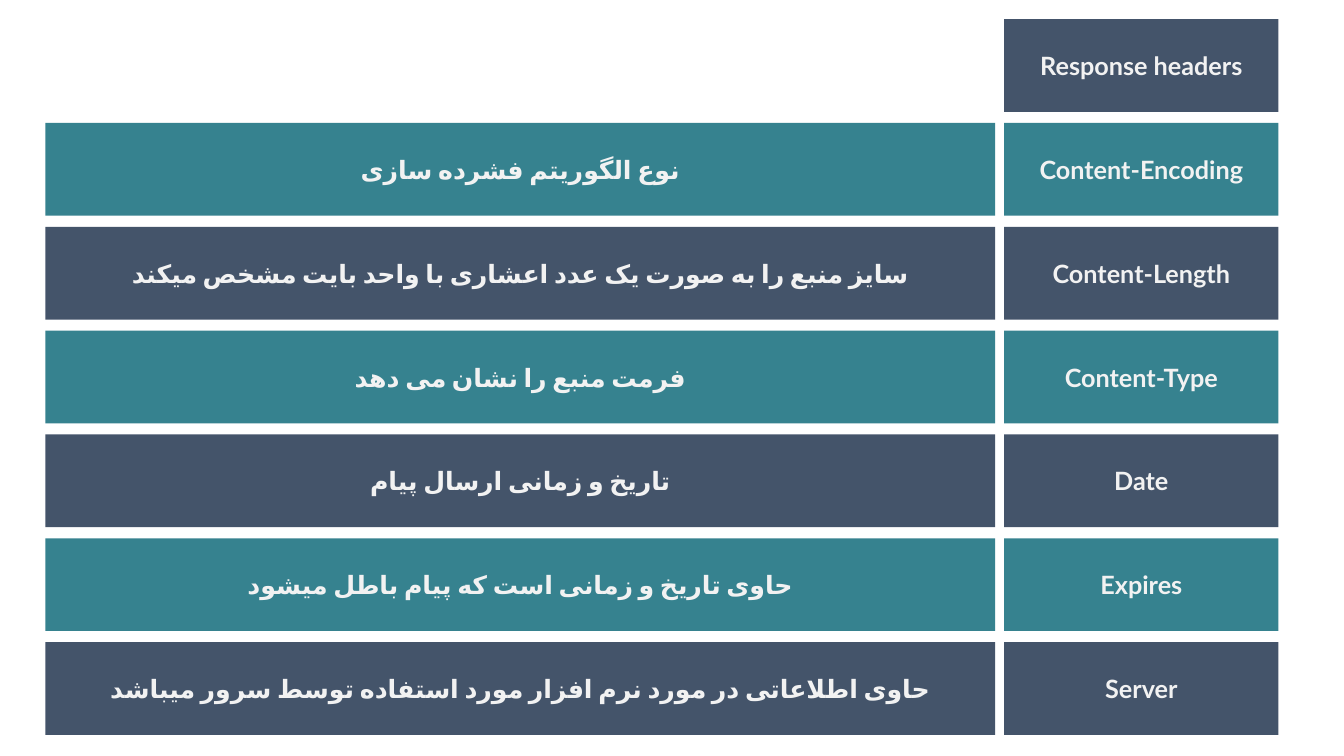
from lxml.etree import SubElement as Sub
from pptx import Presentation
from pptx.dml.color import RGBColor
from pptx.enum.shapes import MSO_SHAPE as Shape
from pptx.enum.text import MSO_ANCHOR as Anchor, MSO_AUTO_SIZE as Fit, PP_ALIGN as Align
from pptx.oxml.ns import qn
from pptx.util import Inches, Pt

TEAL = RGBColor(0x36, 0x82, 0x8F)
SLATE = RGBColor(0x44, 0x54, 0x6A)
PALE = RGBColor(0xF2, 0xF2, 0xF2)

TOP, PITCH, HIGH = 0.19, 1.03, 0.92
NOTE_COL = (0.45, 9.42)
NAME_COL = (9.96, 2.72)

ROWS = [
    ("Content-Encoding", "نوع الگوریتم فشرده سازی"),
    ("Content-Length", "سایز منبع را به صورت یک عدد اعشاری با واحد بایت مشخص میکند"),
    ("Content-Type", "فرمت منبع را نشان می دهد"),
    ("Date", "تاریخ و زمانی ارسال پیام"),
    ("Expires", "حاوی تاریخ و زمانی است که پیام باطل میشود"),
    ("Server", "حاوی اطلاعاتی در مورد نرم افزار مورد استفاده توسط سرور میباشد"),
]


def cell_box(col, row):
    """Return the box of a grid cell."""
    left, width = col
    return [Inches(n) for n in (left, TOP + row * PITCH, width, HIGH)]


def set_rtl(para, font):
    """Make a paragraph run from right to left in the given script font."""
    para._p.get_or_add_pPr().set("rtl", "1")
    props = para.runs[0]._r.get_or_add_rPr()
    props.set("lang", "fa-IR")
    Sub(props, qn("a:cs")).set("typeface", font)


def style(shape, text, fill, font, rtl=False):
    """Fill a cell and set its centred bold text."""
    shape.fill.solid()
    shape.fill.fore_color.rgb = fill
    shape.line.fill.background()
    frame = shape.text_frame
    frame.text = text
    frame.word_wrap = True
    frame.auto_size = Fit.NONE
    frame.vertical_anchor = Anchor.MIDDLE
    para = frame.paragraphs[0]
    para.alignment = Align.CENTER
    face = para.runs[0].font
    face.name = font
    face.size = Pt(18)
    face.bold = True
    face.color.rgb = PALE
    if rtl:
        set_rtl(para, font)


def add_head(slide, box):
    """Place the title in the head cell."""
    title = slide.shapes.title
    title.left, title.top, title.width, title.height = box
    style(title, "Response headers", SLATE, "Lato")


def add_cell(slide, box, text, fill, font, rtl=False):
    """Add one coloured cell in its box."""
    cell = slide.shapes.add_shape(Shape.RECTANGLE, *box)
    cell.shadow.inherit = False
    style(cell, text, fill, font, rtl)


def add_row(slide, row, name, note):
    """Add a header name and its meaning."""
    fill = TEAL if row % 2 else SLATE
    add_cell(slide, cell_box(NAME_COL, row), name, fill, "Lato")
    add_cell(slide, cell_box(NOTE_COL, row), note, fill, "Calibri", True)


def main():
    """Build and save the slide."""
    deck = Presentation()
    deck.slide_width, deck.slide_height = Inches(13.33), Inches(7.5)
    slide = deck.slides.add_slide(deck.slide_layouts[5])
    add_head(slide, cell_box(NAME_COL, 0))
    for row, (name, note) in enumerate(ROWS, 1):
        add_row(slide, row, name, note)
    deck.save("out.pptx")


if __name__ == "__main__":
    main()
